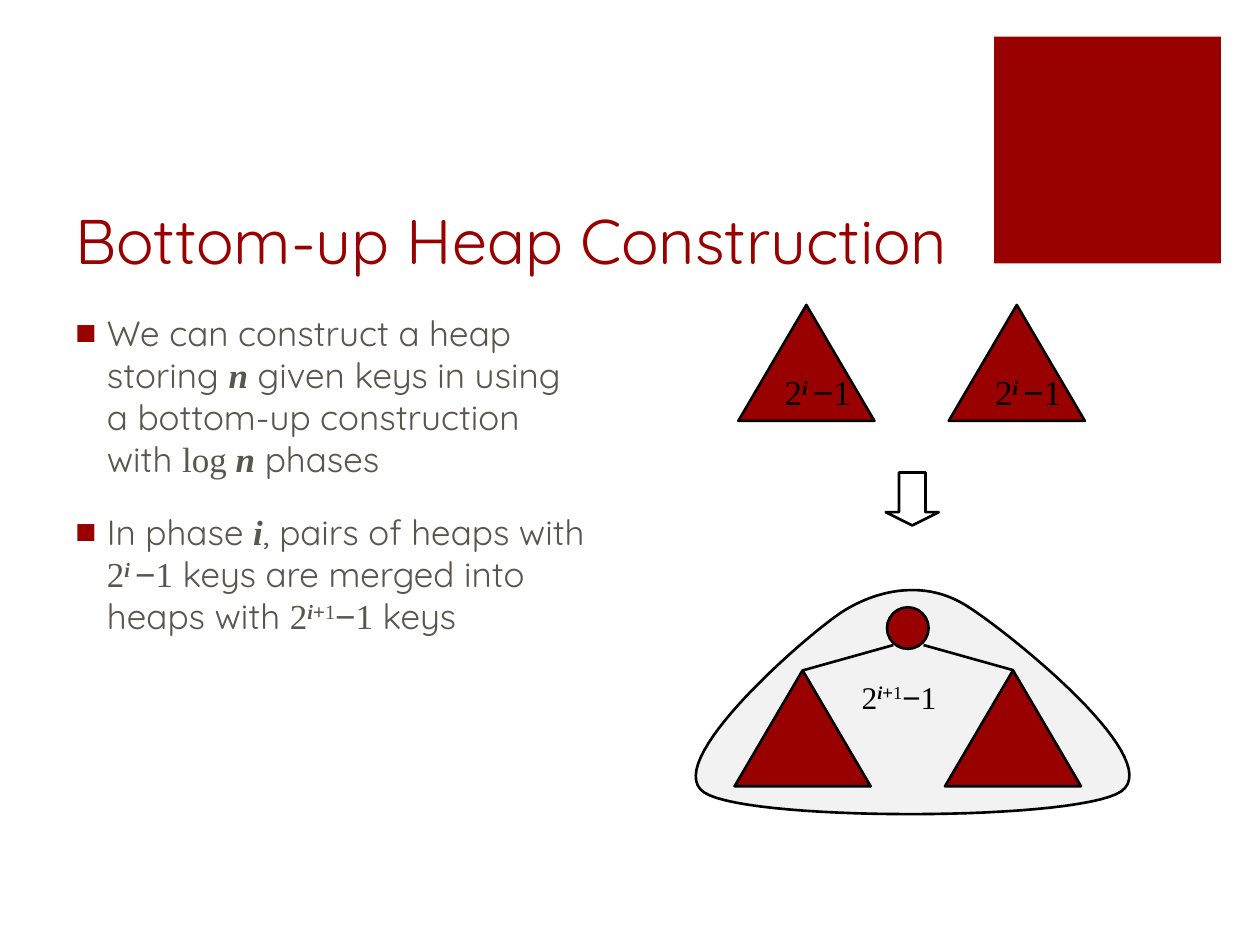
from lxml import etree
from pptx import Presentation
from pptx.dml.color import RGBColor
from pptx.enum.shapes import MSO_CONNECTOR, MSO_SHAPE
from pptx.enum.text import MSO_ANCHOR, PP_ALIGN
from pptx.oxml.ns import qn
from pptx.util import Inches, Pt

TOP, MIDDLE, BOTTOM = MSO_ANCHOR.TOP, MSO_ANCHOR.MIDDLE, MSO_ANCHOR.BOTTOM
LEFT = PP_ALIGN.LEFT
STRAIGHT = MSO_CONNECTOR.STRAIGHT
RECT, OVAL = MSO_SHAPE.RECTANGLE, MSO_SHAPE.OVAL
TRIANGLE, DOWN_ARROW = MSO_SHAPE.ISOSCELES_TRIANGLE, MSO_SHAPE.DOWN_ARROW

THEME = {
    "red": "990000", "body": "59564B", "ink": "000000", "blob": "F2F2F2",
    "title_size": 36, "body_size": 20, "label_size": 18, "line": 1.5,
}

# Run styles: font, bold italic, superscript
STYLES = {
    "prose": ("Quicksand", False, False),
    "num": ("Times New Roman", False, False),
    "var": ("Times New Roman", True, False),
    "sign": ("Arial", False, False),
    "sup_num": ("Times New Roman", False, True),
    "sup_var": ("Times New Roman", True, True),
    "sup_sign": ("Arial", False, True),
}

# Content
SMALL_HEAP = [("2", "num"), ("i ", "sup_var"), ("−", "sign"), ("1", "num")]
MERGED_HEAP = [("2", "num"), ("i", "sup_var"), ("+", "sup_sign"),
               ("1", "sup_num"), ("−", "sign"), ("1", "num")]
TITLE = [[("Bottom-up Heap Construction", "prose")]]
POINTS = [
    [("We can construct a heap storing ", "prose"), ("n", "var"),
     (" given keys in using a bottom-up construction with ", "prose"),
     ("log ", "num"), ("n", "var"), (" phases", "prose")],
    [("In phase ", "prose"), ("i", "var"), (", pairs of heaps with ", "prose"),
     *SMALL_HEAP, (" keys are merged into heaps with ", "prose"),
     *MERGED_HEAP, (" keys", "prose")],
]

# Diagram geometry, in inches
HEAP_W, HEAP_H, HEAP_GAP = 1.08, 0.92, 1.67
PAIR_LEFT, PAIR_TOP = 5.86, 2.42
MERGED_LEFT, MERGED_TOP = 5.83, 5.32
ROOT_X, ROOT_Y, ROOT_D = 7.04, 4.82, 0.33
EDGE_X, EDGE_Y, EDGE_HALF = 7.21, 5.12, 0.12
BLOB_START = (6.71, 4.84)
BLOB_CURVES = [
    [(6.47, 4.98), (5.22, 6.05), (5.59, 6.29)],
    [(5.94, 6.52), (8.55, 6.52), (8.90, 6.28)],
    [(9.25, 6.03), (8.06, 5.06), (7.69, 4.82)],
    [(7.33, 4.58), (6.94, 4.70), BLOB_START],
]
CURVE_STEPS = 30

prs = Presentation()
prs.slide_width, prs.slide_height = Inches(10), Inches(7.5)
slide = prs.slides.add_slide(prs.slide_layouts[6])
shapes = slide.shapes


def rgb(name):
    return RGBColor.from_string(THEME[name])


def write(frame, paragraphs, *, size, color, anchor=TOP, wrap=True, bullet=False):
    frame.word_wrap = wrap
    frame.vertical_anchor = anchor
    for index, runs in enumerate(paragraphs):
        para = frame.paragraphs[0] if index == 0 else frame.add_paragraph()
        para.alignment = LEFT
        if bullet:
            add_bullet(para)
        for text, style in runs:
            run = para.add_run()
            run.text = text
            font = run.font
            font.name, emphasis, raised = STYLES[style]
            font.bold = font.italic = emphasis
            font.size = Pt(THEME[size])
            font.color.rgb = rgb(color)
            if raised:
                run._r.get_or_add_rPr().set("baseline", "30000")


def add_bullet(para):
    para.space_before = Pt(18)
    props = para._p.get_or_add_pPr()
    props.set("marL", str(Inches(0.25)))
    props.set("indent", str(Inches(-0.25)))
    color = etree.SubElement(props, qn("a:buClr"))
    etree.SubElement(color, qn("a:srgbClr")).set("val", THEME["red"])
    etree.SubElement(props, qn("a:buFont")).set("typeface", "Arial")
    etree.SubElement(props, qn("a:buChar")).set("char", "■")


def text_box(box, paragraphs, **text_format):
    frame = shapes.add_textbox(*map(Inches, box)).text_frame
    write(frame, paragraphs, **text_format)


def paint(shape, fill, outlined=True):
    shape.shadow.inherit = False
    if fill:
        shape.fill.solid()
        shape.fill.fore_color.rgb = rgb(fill)
    else:
        shape.fill.background()
    if outlined:
        shape.line.color.rgb = rgb("ink")
        shape.line.width = Pt(THEME["line"])
    else:
        shape.line.fill.background()
    return shape


def add_part(kind, box, fill, outlined=True):
    return paint(shapes.add_shape(kind, *map(Inches, box)), fill, outlined)


def heap_pair(left, top):
    return [add_part(TRIANGLE, (left + i * HEAP_GAP, top, HEAP_W, HEAP_H), "red")
            for i in range(2)]


def curve_points(start, curves):
    """Sample a chain of cubic Bezier curves."""
    for c1, c2, end in curves:
        for step in range(1, CURVE_STEPS + 1):
            t = step / CURVE_STEPS
            u = 1 - t
            yield tuple(
                Inches(u**3 * a + 3 * u * u * t * b + 3 * u * t * t * c + t**3 * d)
                for a, b, c, d in zip(start, c1, c2, end))
        start = end


# Corner block, title and bullet points
add_part(RECT, (7.89, 0.29, 1.8, 1.8), "red", outlined=False)
text_box((0.5, 1, 7.12, 1.25), TITLE, size="title_size", color="red", anchor=BOTTOM)
text_box((0.5, 2.42, 4.29, 4.28), POINTS, size="body_size", color="body", bullet=True)

# Two separate heaps
for heap in heap_pair(PAIR_LEFT, PAIR_TOP):
    write(heap.text_frame, [SMALL_HEAP], size="body_size", color="ink",
          anchor=MIDDLE, wrap=False)

# Merge arrow
arrow = add_part(DOWN_ARROW, (7.03, 3.75, 0.42, 0.42), None)
arrow.adjustments[0], arrow.adjustments[1] = 0.5, 0.25

# Merged heap: outline, subheaps, root and edges
outline = shapes.build_freeform(*map(Inches, BLOB_START), scale=1.0)
outline.add_line_segments(list(curve_points(BLOB_START, BLOB_CURVES)), close=True)
paint(outline.convert_to_shape(), "blob")
heap_pair(MERGED_LEFT, MERGED_TOP)
add_part(OVAL, (ROOT_X, ROOT_Y, ROOT_D, ROOT_D), "red")
for side in (-1, 1):
    ends = (EDGE_X + side * EDGE_HALF, EDGE_Y,
            EDGE_X + side * HEAP_GAP / 2, MERGED_TOP)
    edge = shapes.add_connector(STRAIGHT, *map(Inches, ends))
    edge.line.color.rgb = rgb("ink")
    edge.line.width = Pt(THEME["line"])
    etree.SubElement(edge._element.spPr, qn("a:effectLst"))
text_box((6.74, 5.33, 1.01, 0.5), [MERGED_HEAP], size="label_size", color="ink",
         wrap=False)

prs.save("out.pptx")
